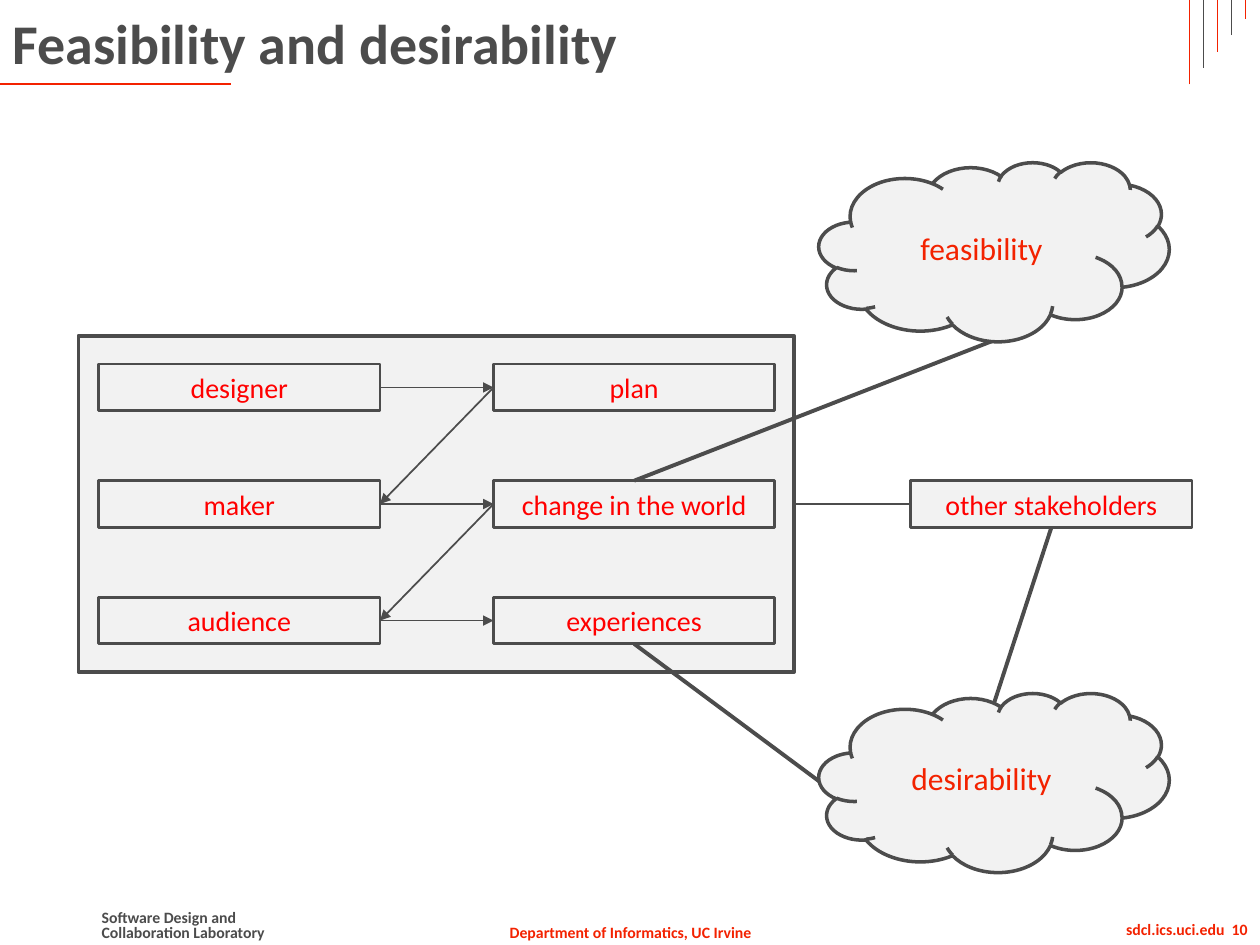
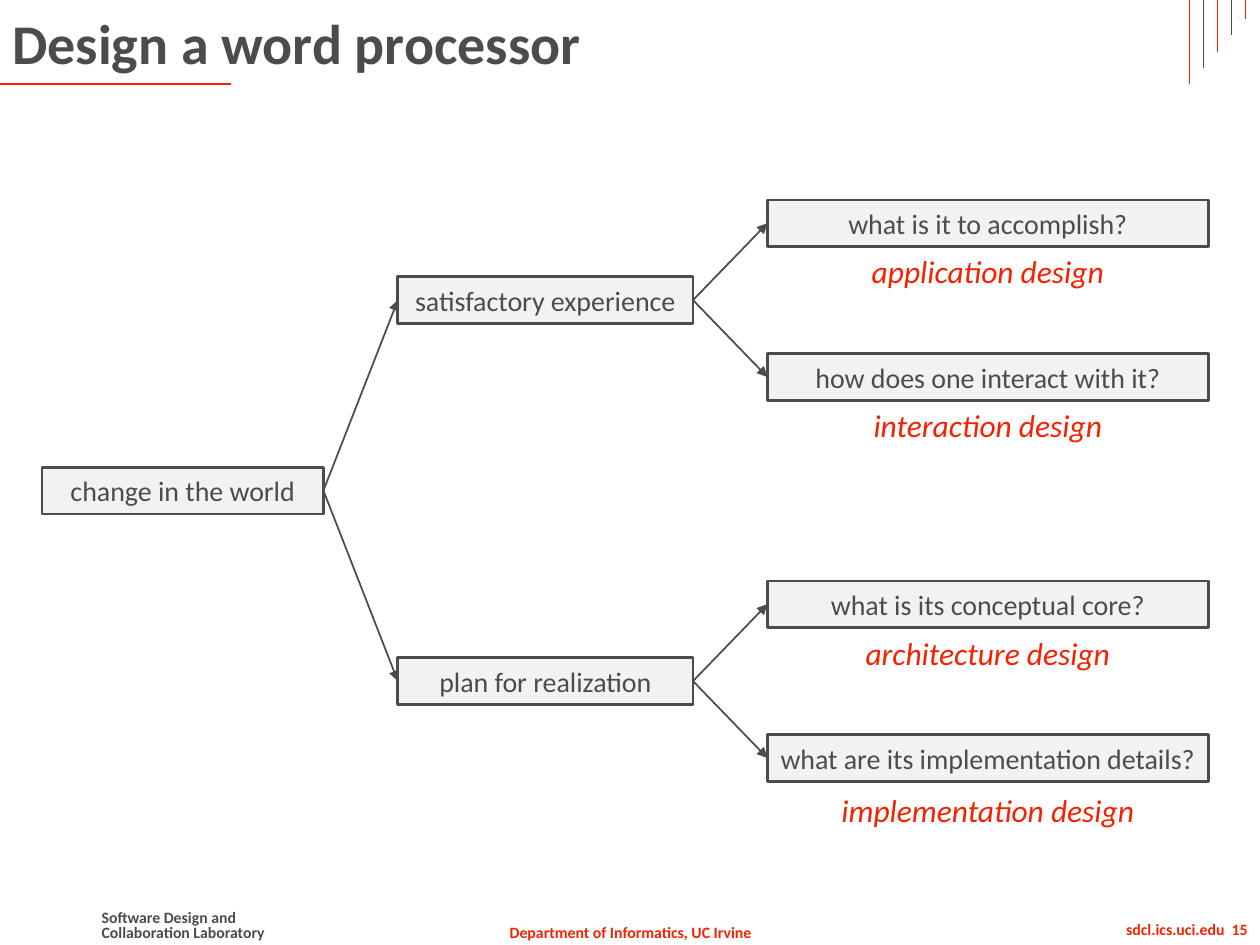
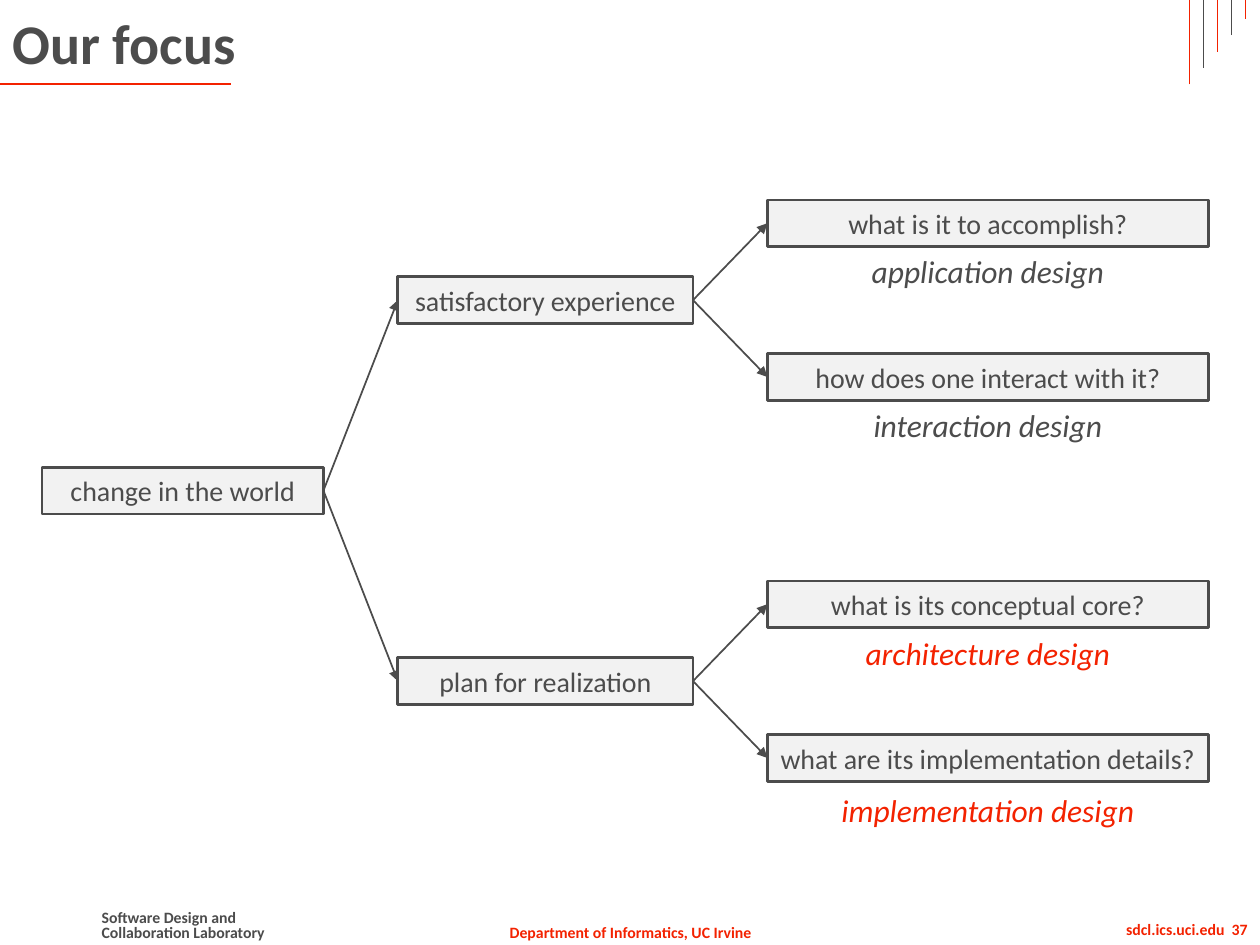
from dataclasses import dataclass

from lxml.etree import SubElement
from pptx import Presentation
from pptx.dml.color import RGBColor as RGB
from pptx.enum.shapes import MSO_CONNECTOR as CONN, MSO_SHAPE as SHAPE
from pptx.enum.text import MSO_ANCHOR as ANCHOR, PP_ALIGN as ALIGN
from pptx.oxml.ns import qn
from pptx.util import Cm, Pt


@dataclass(frozen=True)
class Theme:
    font: str = "Calibri"
    dark: RGB = RGB(0x4C, 0x4C, 0x4C)
    accent: RGB = RGB(0xF3, 0x22, 0x00)
    red: RGB = RGB(0xFF, 0x00, 0x00)
    panel: RGB = RGB(0xF2, 0xF2, 0xF2)
    title: int = 32
    large: int = 18
    body: int = 16
    footer: int = 9
    hairline: float = 0.5
    arrow: float = 1
    border: float = 1.5
    frame: float = 2
    link: float = 2.25


T = Theme()


def put(s, box, text="", size=T.body, color=T.dark, kind=None, border=T.border,
        align=ALIGN.CENTER, anchor=ANCHOR.MIDDLE, wrap=True, bold=False, italic=False):
    x, y, w, h = map(Cm, box)
    if kind is None:
        sp = s.shapes.add_textbox(x, y, w, h)
    else:
        sp = s.shapes.add_shape(kind, x, y, w, h)
        sp.shadow.inherit = False
        sp.fill.solid()
        sp.fill.fore_color.rgb = T.panel
        sp.line.color.rgb = T.dark
        sp.line.width = Pt(border)
    if text:
        tf = sp.text_frame
        tf.word_wrap = wrap
        tf.vertical_anchor = anchor
        p = tf.paragraphs[0]
        p.text = text
        p.alignment = align
        f = p.font
        f.name, f.size, f.bold, f.italic = T.font, Pt(size), bold, italic
        f.color.rgb = color


def line(s, x1, y1, x2, y2, width=T.arrow, color=T.dark, arrow=False):
    c = s.shapes.add_connector(CONN.STRAIGHT, Cm(x1), Cm(y1), Cm(x2), Cm(y2))
    c.line.color.rgb = color
    c.line.width = Pt(width)
    spPr = c.element.spPr
    if arrow:
        SubElement(spPr.find(qn("a:ln")), qn("a:tailEnd"), type="triangle")
    SubElement(spPr, qn("a:effectLst"))


prs = Presentation()
prs.slide_width, prs.slide_height = Cm(25.4), Cm(19.05)

footers = [
    ((9.98, 18.47, 5.46, 0.64), "Department of Informatics, UC Irvine", T.accent, ALIGN.CENTER),
    ((1.8, 18.47, 3.89, 0.64), "Collaboration Laboratory", T.dark, ALIGN.LEFT),
    ((1.8, 18.17, 3.28, 0.64), "Software Design and", T.dark, ALIGN.LEFT),
    ((19.91, 18.42, 5.49, 0.64), "sdcl.ics.uci.edu  {}", T.accent, ALIGN.RIGHT),
]
slides = []
for title, number in [("Feasibility and desirability", 10), ("Design a word processor", 15), ("Our focus", 37)]:
    s = prs.slides.add_slide(prs.slide_layouts[6])
    slides.append(s)
    for box, text, color, align in footers:
        put(s, box, text.format(number), T.footer, color, align=align, anchor=ANCHOR.TOP, wrap=False, bold=True)
    line(s, 0, 1.69, 4.65, 1.69, T.border, T.accent)
    for i in range(5):
        x = 23.98 + 0.28 * i
        line(s, x, 1.7 - 0.33 * i, x, 0, T.hairline, T.dark if i % 2 else T.accent)
    put(s, (0, 0, 22.86, 1.7), title, T.title, align=ALIGN.LEFT, bold=True)

box_w, box_h = 5.67, 0.94

s = slides[0]
actor_x, result_x, other_x = 1.99, 9.95, 18.36
first_y, row_step = 7.81, 2.35
middle_y = first_y + row_step
actor_right = actor_x + box_w
result_mid = result_x + box_w / 2
cloud_x, cloud_w, cloud_h = 16.51, 7.06, 3.61
cloud_mid = 20.04

put(s, (1.58, 6.77, 14.43, 6.78), kind=SHAPE.RECTANGLE, border=T.frame)
rows = [("designer", "plan"), ("maker", "change in the world"), ("audience", "experiences")]
for i, (actor, result) in enumerate(rows):
    y = first_y + i * row_step
    line(s, actor_right, y, result_x, y, arrow=True)
    if i < len(rows) - 1:
        line(s, result_x, y, actor_right, y + row_step, arrow=True)
    for x, text in [(actor_x, actor), (result_x, result)]:
        put(s, (x, y - box_h / 2, box_w, box_h), text, color=T.red, kind=SHAPE.RECTANGLE)

line(s, 16.01, middle_y, other_x, middle_y)
line(s, other_x + box_w / 2, middle_y + box_h / 2, cloud_mid, 14.17, T.link)
line(s, result_mid, middle_y - box_h / 2, cloud_mid, 6.86, T.link)
line(s, result_mid, middle_y + row_step + box_h / 2, 16.54, 15.77, T.link)
put(s, (other_x, middle_y - box_h / 2, box_w, box_h), "other stakeholders", color=T.red, kind=SHAPE.RECTANGLE)
for y, text in [(3.27, "feasibility"), (13.97, "desirability")]:
    put(s, (cloud_x, y, cloud_w, cloud_h), text, T.large, T.accent, kind=SHAPE.CLOUD, border=T.frame)

root_x, root_y = 0.85, 9.89
branch_x, branch_w, branch_step = 8.02, 5.95, 3.84
leaf_x, leaf_w, leaf_step = 15.47, 8.89, 1.55
caption_h = 1.02
branches = [
    ("satisfactory experience", -1, [
        ("what is it to accomplish?", "application design", 5.23, 0.46),
        ("how does one interact with it?", "interaction design", 5.18, 0.46)]),
    ("plan for realization", 1, [
        ("what is its conceptual core?", "architecture design", 5.51, 0.47),
        ("what are its implementation details?", "implementation design", 6.55, 0.55)]),
]
for s, experience_color in [(slides[1], T.accent), (slides[2], T.dark)]:
    put(s, (root_x, root_y - box_h / 2, box_w, box_h), "change in the world", kind=SHAPE.RECTANGLE)
    for (branch, side, leaves), color in zip(branches, (experience_color, T.accent)):
        branch_y = root_y + side * branch_step
        line(s, root_x + box_w, root_y, branch_x, branch_y, arrow=True)
        put(s, (branch_x, branch_y - box_h / 2, branch_w, box_h), branch, kind=SHAPE.RECTANGLE)
        for (question, design, caption_w, gap), direction in zip(leaves, (-1, 1)):
            leaf_y = branch_y + direction * leaf_step
            line(s, branch_x + branch_w, branch_y, leaf_x, leaf_y, arrow=True)
            put(s, (leaf_x, leaf_y - box_h / 2, leaf_w, box_h), question, kind=SHAPE.RECTANGLE)
            put(s, (leaf_x + (leaf_w - caption_w) / 2, leaf_y + gap, caption_w, caption_h), design,
                T.large, color, anchor=ANCHOR.TOP, wrap=False, italic=True)

prs.save("out.pptx")
